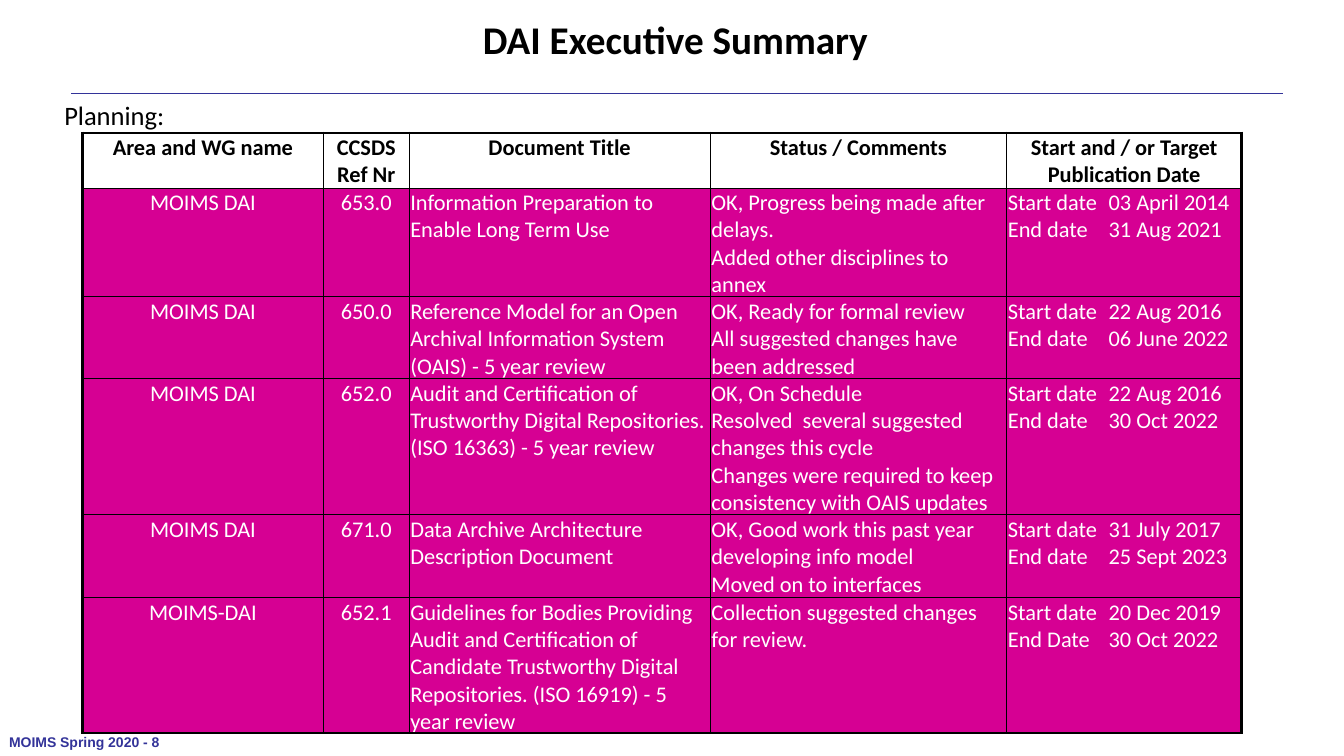
from lxml.etree import SubElement
from pptx import Presentation
from pptx.dml.color import RGBColor
from pptx.enum.shapes import MSO_CONNECTOR
from pptx.enum.text import MSO_ANCHOR, MSO_AUTO_SIZE, PP_ALIGN
from pptx.oxml.ns import qn
from pptx.util import Cm, Pt

BLACK, WHITE, NAVY, MAGENTA = "000000", "FFFFFF", "333399", "D60093"
THIN, THICK = 0.5, 2

COLUMN_WIDTHS = [6.07, 2.16, 7.59, 7.47, 5.92]
ROW_HEIGHTS = [1.39, 2.73, 2.04, 3.43, 2.09, 3.4]
HEADINGS = ["Area and WG name", "CCSDS Ref Nr", "Document Title",
            "Status / Comments", "Start and / or Target Publication Date"]
PROJECTS = [
    ["MOIMS DAI", "653.0", "Information Preparation to Enable Long Term Use",
     "OK, Progress being made after delays.\nAdded other disciplines to annex",
     "Start date\t03 April 2014\nEnd date\t31 Aug 2021"],
    ["MOIMS DAI", "650.0",
     "Reference Model for an Open Archival Information System (OAIS) - 5 year review",
     "OK, Ready for formal review\nAll suggested changes have been addressed",
     "Start date\t22 Aug 2016\nEnd date\t06 June 2022"],
    ["MOIMS DAI", "652.0",
     "Audit and Certification of Trustworthy Digital Repositories. "
     "(ISO 16363) - 5 year review",
     "OK, On Schedule\nResolved  several suggested changes this cycle\n"
     "Changes were required to keep consistency with OAIS updates",
     "Start date\t22 Aug 2016\nEnd date\t30 Oct 2022"],
    ["MOIMS DAI", "671.0", "Data Archive Architecture Description Document",
     "OK, Good work this past year\ndeveloping info model\nMoved on to interfaces",
     "Start date\t31 July 2017\nEnd date\t25 Sept 2023"],
    ["MOIMS-DAI", "652.1",
     "Guidelines for Bodies Providing Audit and Certification of Candidate "
     "Trustworthy Digital Repositories. (ISO 16919) - 5 year review",
     "Collection suggested changes for review.",
     "Start date\t20 Dec 2019\nEnd Date\t30 Oct 2022"],
]


def color(value):
    return RGBColor.from_string(value)


def write(frame, text, size=16, font="Calibri", fill=BLACK, bold=False,
          align=PP_ALIGN.LEFT, spacing=None, tab=None):
    """Fill a text frame, one paragraph for each line of text."""
    for index, line in enumerate(text.split("\n")):
        para = frame.paragraphs[0] if index == 0 else frame.add_paragraph()
        properties = para._p.get_or_add_pPr()
        properties.set("marL", "0")
        properties.set("indent", "0")
        SubElement(properties, qn("a:buNone"))
        if tab:
            stops = SubElement(properties, qn("a:tabLst"))
            SubElement(stops, qn("a:tab"), pos=str(Cm(tab)), algn="l")
        para.alignment = align
        para.space_before = para.space_after = Pt(0)
        para.line_spacing = spacing
        span = para.add_run()
        span.text = line
        span.font.size = Pt(size)
        span.font.name = font
        span.font.bold = bold
        span.font.color.rgb = color(fill)


class Page:
    """A slide with the house style of the planning report."""

    def __init__(self, deck):
        self.slide = deck.slides.add_slide(deck.slide_layouts[1])
        self.shapes = self.slide.shapes

    def placeholder(self, index, place, text, left_margin=0.15, **style):
        box = self.slide.placeholders[index]
        box.left, box.top, box.width, box.height = map(Cm, place)
        frame = box.text_frame
        frame.word_wrap = True
        frame.auto_size = MSO_AUTO_SIZE.NONE
        frame.vertical_anchor = MSO_ANCHOR.TOP
        frame.margin_left = Cm(left_margin)
        frame.margin_right = frame.margin_top = frame.margin_bottom = Cm(0.15)
        write(frame, text, **style)

    def footer(self, place, text, **style):
        box = self.shapes.add_textbox(*map(Cm, place))
        frame = box.text_frame
        frame.word_wrap = False
        frame.auto_size = MSO_AUTO_SIZE.SHAPE_TO_FIT_TEXT
        frame.margin_left = frame.margin_right = Cm(0.23)
        frame.margin_top = frame.margin_bottom = Cm(0.1)
        write(frame, text, **style)

    def rule(self, left, right, top):
        line = self.shapes.add_connector(
            MSO_CONNECTOR.STRAIGHT, Cm(left), Cm(top), Cm(right), Cm(top))
        line.line.color.rgb = color(NAVY)
        line.line.width = Pt(0.13)
        SubElement(line._element.spPr, qn("a:effectLst"))

    def borders(self, cell, widths):
        properties = cell._tc.get_or_add_tcPr()
        for position, (side, width) in enumerate(widths.items()):
            border = SubElement(properties, qn(f"a:ln{side}"), w=str(Pt(width)))
            paint = SubElement(border, qn("a:solidFill"))
            SubElement(paint, qn("a:srgbClr"), val=BLACK)
            properties.insert(position, border)

    def table(self, left, top, rows):
        last_row, last_column = len(rows) - 1, len(COLUMN_WIDTHS) - 1
        table = self.shapes.add_table(
            len(rows), len(COLUMN_WIDTHS), Cm(left), Cm(top),
            Cm(sum(COLUMN_WIDTHS)), Cm(sum(ROW_HEIGHTS))).table
        table.first_row = table.horz_banding = False
        for column, width in zip(table.columns, COLUMN_WIDTHS):
            column.width = Cm(width)
        for r, (row, height) in enumerate(zip(rows, ROW_HEIGHTS)):
            table.rows[r].height = Cm(height)
            for c, text in enumerate(row):
                self.cell(table.cell(r, c), text, header=r == 0,
                          centered=r == 0 or c < 2,
                          tab=(2.88 if r == last_row else 2.72) if "\t" in text else None)
                self.borders(table.cell(r, c), {
                    "L": THICK if c == 0 else THIN,
                    "R": THICK if c == last_column else THIN,
                    "T": THICK if r == 0 else THIN,
                    "B": THICK if r == last_row else THIN})

    def cell(self, cell, text, header, centered, tab):
        cell.margin_left = cell.margin_right = cell.margin_top = Cm(0.03)
        cell.margin_bottom = Cm(0)
        if header:
            cell.fill.background()
        else:
            cell.fill.solid()
            cell.fill.fore_color.rgb = color(MAGENTA)
        write(cell.text_frame, text, fill=BLACK if header else WHITE, bold=header,
              align=PP_ALIGN.CENTER if centered else PP_ALIGN.LEFT, tab=tab)


def main():
    deck = Presentation()
    deck.slide_width, deck.slide_height = Cm(33.87), Cm(19.05)
    page = Page(deck)

    # Rule and footer
    page.rule(1.8, 32.33, 2.34)
    page.footer((0, 18.39, 4.52, 0.66), "MOIMS Spring 2020 - 8",
                size=10, font="Arial", fill=NAVY, bold=True)

    # Title and lead-in
    page.placeholder(0, (6.68, 0.36, 19.63, 1.47), "DAI Executive Summary",
                     left_margin=1.2, size=28, bold=True,
                     align=PP_ALIGN.CENTER, spacing=0.9)
    page.placeholder(1, (1.47, 2.26, 30.07, 14.53), "Planning:",
                     size=19, spacing=1.1)

    # Planning table
    page.table(2.08, 3.35, [HEADINGS] + PROJECTS)
    deck.save("out.pptx")


if __name__ == "__main__":
    main()
